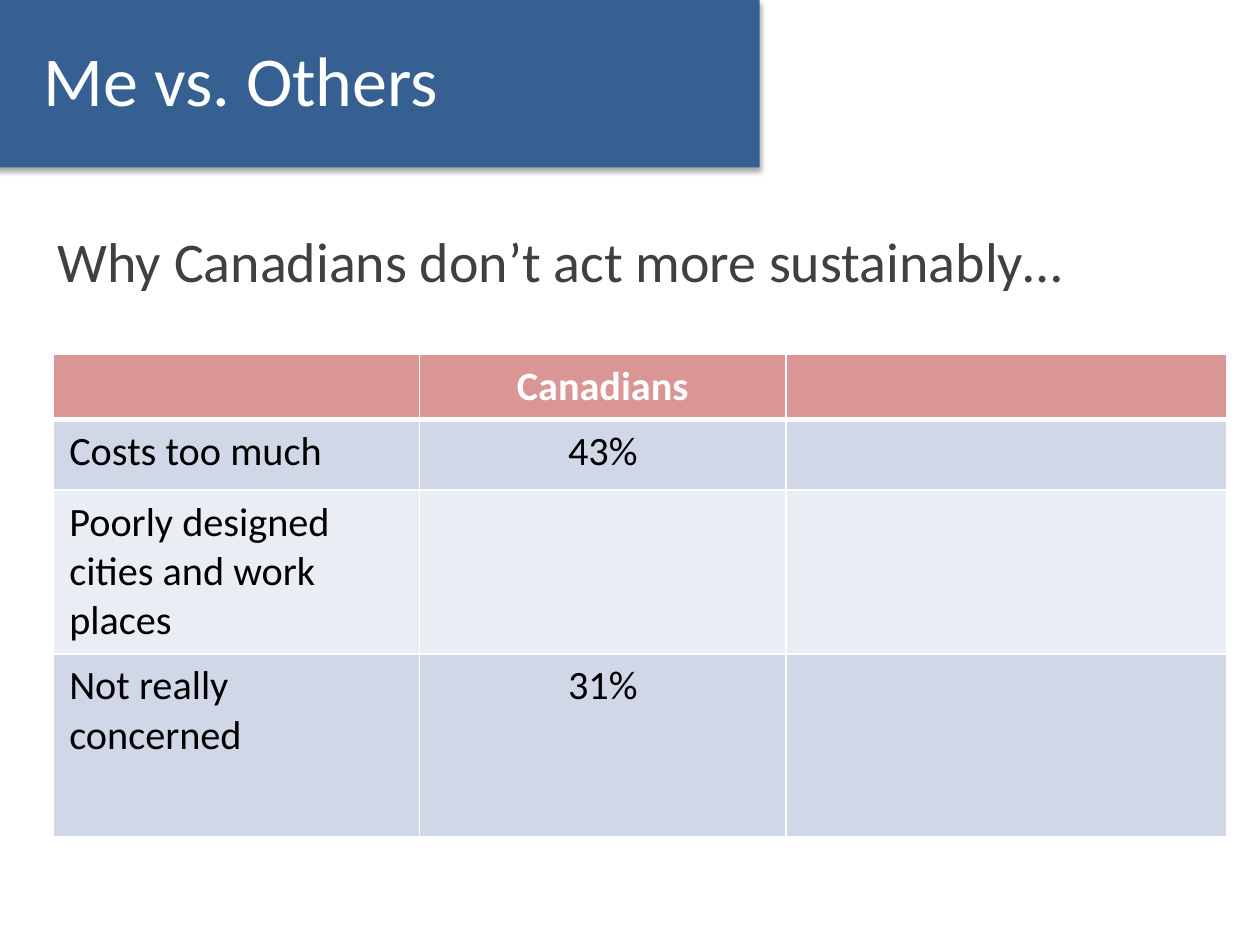
"""Build the "Me vs. Others" slide with its table of reasons."""
from lxml.etree import SubElement
from pptx import Presentation
from pptx.dml.color import RGBColor
from pptx.enum.shapes import MSO_SHAPE
from pptx.enum.text import MSO_ANCHOR, PP_ALIGN
from pptx.oxml import parse_xml
from pptx.oxml.ns import nsdecls, qn
from pptx.util import Inches, Pt

COLORS = {"banner": "376092", "heading": "404040", "header": "D99694",
          "band": "D0D8E8", "light": "E9EDF4", "white": "FFFFFF", "black": "000000"}


def write(tf, text, color, **formats):
    p = tf.paragraphs[0]
    r = p.add_run()
    r.text = text
    r.font.color.rgb = RGBColor.from_string(COLORS[color])
    for name, value in {"name": "Calibri", **formats}.items():
        setattr(r.font, name, value)
    return p


def add_border(tc_pr, side, points):
    ln = SubElement(tc_pr, qn(f"a:ln{side}"), w=str(Pt(points)))
    fill = SubElement(ln, qn("a:solidFill"))
    SubElement(fill, qn("a:srgbClr"), val=COLORS["white"])


prs = Presentation()
prs.slide_width, prs.slide_height = Inches(10), Inches(7.5)
s = prs.slides.add_slide(prs.slide_layouts[6])

sp = s.shapes.add_textbox(Inches(0.36), Inches(1.75), Inches(9.25), Inches(0.8))
sp.text_frame.word_wrap = True
write(sp.text_frame, "Why Canadians don’t act more sustainably…", "heading", size=Pt(32))

rows = [
    ("header", 0.52, ["", "Canadians", ""]),
    ("band", 0.56, ["Costs too much", "43%", ""]),
    ("light", 1.3, ["Poorly designed cities and work places", "", ""]),
    ("band", 1.45, ["Not really concerned", "31%", ""]),
]
widths = [2.91, 2.91, 3.5]
table = s.shapes.add_table(len(rows), len(widths), Inches(0.42), Inches(2.81),
                           Inches(sum(widths)), Inches(3.83)).table
for column, width in zip(table.columns, widths):
    column.width = Inches(width)
margins = {"margin_left": 0.13, "margin_right": 0.13, "margin_top": 0.06, "margin_bottom": 0.06}
for i, (fill, height, texts) in enumerate(rows):
    table.rows[i].height = Inches(height)
    for j, text in enumerate(texts):
        cell = table.cell(i, j)
        tc_pr = cell._tc.get_or_add_tcPr()
        for side, points in {"L": 1, "R": 1, "T": 3 if i == 1 else 1, "B": 3 if i == 0 else 1}.items():
            add_border(tc_pr, side, points)
        cell.fill.solid()
        cell.fill.fore_color.rgb = RGBColor.from_string(COLORS[fill])
        if text:
            for name, value in margins.items():
                setattr(cell, name, Inches(value))
            p = write(cell.text_frame, text, "white" if i == 0 else "black", size=Pt(23), bold=i == 0)
            p.alignment = PP_ALIGN.CENTER if j else PP_ALIGN.LEFT

sp = s.shapes.add_shape(MSO_SHAPE.RECTANGLE, Inches(-0.43), Inches(0), Inches(6.46), Inches(1.33))
sp.fill.solid()
sp.fill.fore_color.rgb = RGBColor.from_string(COLORS["banner"])
sp.line.fill.background()
sp.shadow.inherit = False
sp._element.spPr.find(qn("a:effectLst")).append(parse_xml(
    f'<a:outerShdw {nsdecls("a")} blurRad="{Pt(3.1)}" dist="{Pt(1.8)}" dir="5400000" rotWithShape="0">'
    f'<a:srgbClr val="{COLORS["black"]}"><a:alpha val="35000"/></a:srgbClr></a:outerShdw>'))

sp = s.shapes.add_textbox(Inches(0.25), Inches(0), Inches(5.75), Inches(1.25))
tf = sp.text_frame
tf.word_wrap = True
tf.vertical_anchor = MSO_ANCHOR.MIDDLE
write(tf, "Me vs. Others", "white", size=Pt(40))

prs.save("out.pptx")
